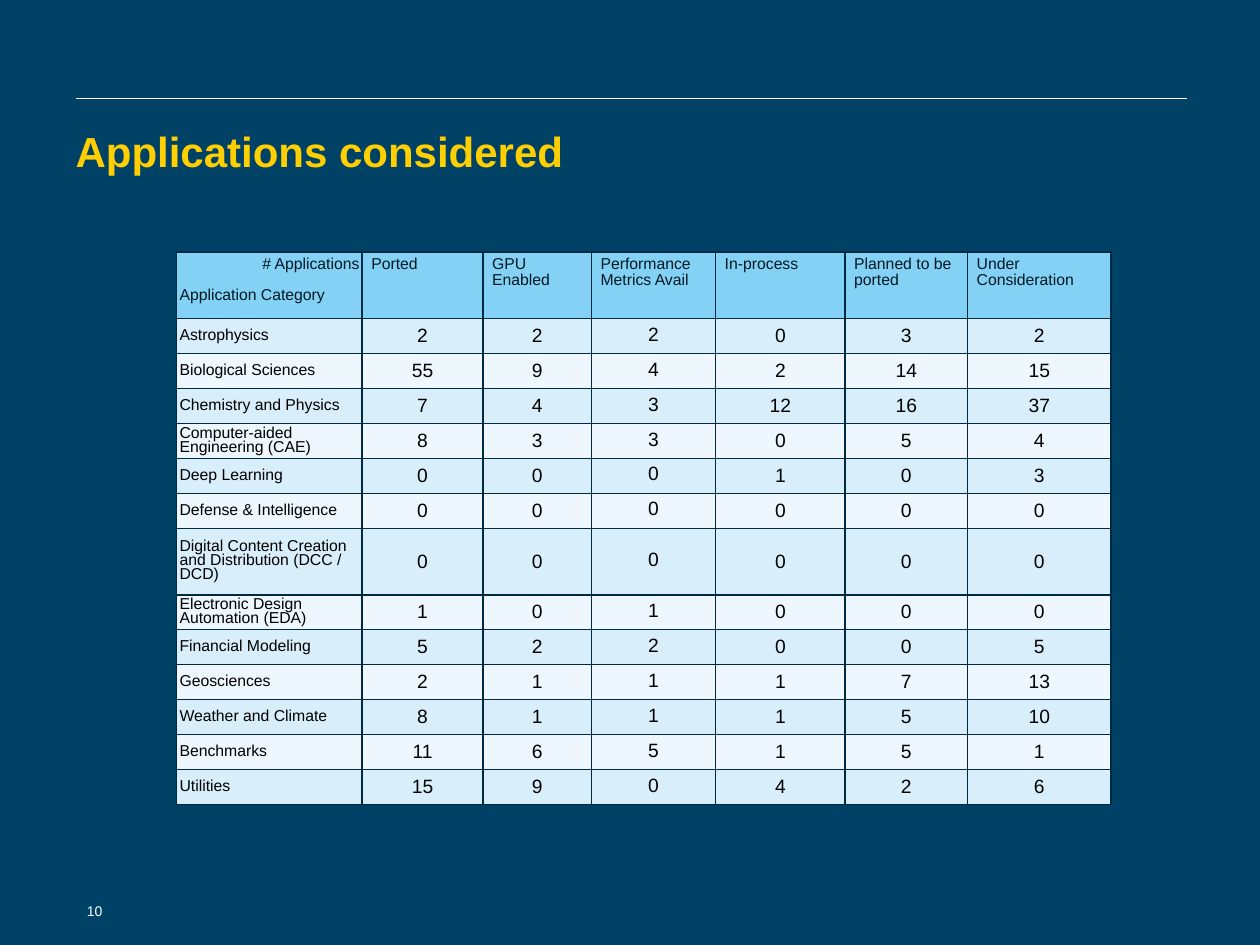
import dataclasses

import pptx
import pptx.dml.color
import pptx.enum.shapes
import pptx.enum.text
import pptx.oxml
import pptx.oxml.ns
import pptx.util

Pt = pptx.util.Pt
Align = pptx.enum.text.PP_ALIGN
Anchor = pptx.enum.text.MSO_ANCHOR


@dataclasses.dataclass(frozen=True)
class Theme:
    font: str = "Arial"
    background: str = "004266"
    rule: str = "FFFFFF"
    title: str = "FFCF01"
    page: str = "FFFFFF"
    border: str = "002944"
    header_fill: str = "83D1F5"
    band_fills: tuple = ("D9EEFB", "EDF7FD")
    header_text: str = "031923"
    body_text: str = "000000"
    title_size: float = 24
    count_size: float = 11
    label_size: float = 9
    page_size: float = 8


THEME = Theme()

COLUMN_WIDTHS = [106, 69, 62, 71, 74, 70, 82]
ROW_HEIGHT, TALL_ROW_HEIGHT = 20, 38
METRICS_COLUMN = 3
CORNER = "# Applications\nApplication Category"
HEADINGS = [
    CORNER, "Ported", "GPU Enabled", "Performance Metrics Avail",
    "In-process", "Planned to be ported", "Under Consideration",
]
LONG_CATEGORY = "Digital Content Creation and Distribution (DCC / DCD)"
APPLICATIONS = [
    ("Astrophysics", 2, 2, 2, 0, 3, 2),
    ("Biological Sciences", 55, 9, 4, 2, 14, 15),
    ("Chemistry and Physics", 7, 4, 3, 12, 16, 37),
    ("Computer-aided Engineering (CAE)", 8, 3, 3, 0, 5, 4),
    ("Deep Learning", 0, 0, 0, 1, 0, 3),
    ("Defense & Intelligence", 0, 0, 0, 0, 0, 0),
    (LONG_CATEGORY, 0, 0, 0, 0, 0, 0),
    ("Electronic Design Automation (EDA)", 1, 0, 1, 0, 0, 0),
    ("Financial Modeling", 5, 2, 2, 0, 0, 5),
    ("Geosciences", 2, 1, 1, 1, 7, 13),
    ("Weather and Climate", 8, 1, 1, 1, 5, 10),
    ("Benchmarks", 11, 6, 5, 1, 5, 1),
    ("Utilities", 15, 9, 0, 4, 2, 6),
]


def rgb(color):
    return pptx.dml.color.RGBColor.from_string(color)


def style_paragraph(paragraph, size, color, bold=False, align=Align.LEFT, spacing=None):
    paragraph.alignment = align
    paragraph.line_spacing = spacing
    for run in paragraph.runs:
        run.font.name = THEME.font
        run.font.size = Pt(size)
        run.font.bold = bold
        run.font.color.rgb = rgb(color)


def add_text(slide, box, text, size, color, bold=False, insets=(0, 0)):
    frame = slide.shapes.add_textbox(*map(Pt, box)).text_frame
    frame.word_wrap = True
    frame.margin_left = frame.margin_right = Pt(insets[0])
    frame.margin_top = frame.margin_bottom = Pt(insets[1])
    frame.text = text
    style_paragraph(frame.paragraphs[0], size, color, bold)


def add_rule(slide, box):
    left, top, width, height = box
    rule = slide.shapes.add_connector(
        pptx.enum.shapes.MSO_CONNECTOR.STRAIGHT,
        Pt(left), Pt(top), Pt(left + width), Pt(top + height),
    )
    rule.line.color.rgb = rgb(THEME.rule)
    rule.line.width = Pt(0.75)
    rule._element.spPr.append(pptx.oxml.parse_xml(
        f'<a:effectLst {pptx.oxml.ns.nsdecls("a")}/>'))


def add_title(slide, box):
    add_text(slide, box, "Applications considered", THEME.title_size, THEME.title, bold=True)


def add_page_number(slide, box):
    add_text(slide, box, "10", THEME.page_size, THEME.page, insets=(7.2, 3.6))


def frame_cell(cell, text, fill, insets, anchor):
    properties = cell._tc.get_or_add_tcPr()
    for side in ("lnL", "lnR", "lnT", "lnB"):
        properties.append(pptx.oxml.parse_xml(
            f'<a:{side} {pptx.oxml.ns.nsdecls("a")} w="{Pt(1)}"><a:solidFill>'
            f'<a:srgbClr val="{THEME.border}"/></a:solidFill></a:{side}>'))
    cell.fill.solid()
    cell.fill.fore_color.rgb = rgb(fill)
    cell.margin_left = cell.margin_right = Pt(insets[0])
    cell.margin_top = cell.margin_bottom = Pt(insets[1])
    cell.vertical_anchor = anchor
    cell.text_frame.text = text


def fill_heading(cell, heading):
    corner = heading == CORNER
    frame_cell(cell, heading, THEME.header_fill, (1.6 if corner else 5.2, 2.6), Anchor.TOP)
    for paragraph in cell.text_frame.paragraphs:
        style_paragraph(paragraph, THEME.label_size, THEME.header_text, spacing=0.9)
    if corner:
        applications, category = cell.text_frame.paragraphs
        applications.alignment = Align.RIGHT
        category.space_before = Pt(9)


def fill_entry(cell, column, value, fill):
    tight = column in (0, METRICS_COLUMN)
    frame_cell(cell, str(value), fill, (1.6, 0.8) if tight else (0, 0), Anchor.MIDDLE)
    style_paragraph(
        cell.text_frame.paragraphs[0],
        THEME.count_size if column else THEME.label_size,
        THEME.body_text,
        align=Align.CENTER if column else Align.LEFT,
        spacing=0.8 if tight else None,
    )


def add_applications_table(slide, box):
    table = slide.shapes.add_table(
        len(APPLICATIONS) + 1, len(HEADINGS), *map(Pt, box)).table
    table.first_row = table.horz_banding = False
    for column, width in zip(table.columns, COLUMN_WIDTHS):
        column.width = Pt(width)
    table.rows[0].height = Pt(TALL_ROW_HEIGHT)
    for column, heading in enumerate(HEADINGS):
        fill_heading(table.cell(0, column), heading)
    for index, entries in enumerate(APPLICATIONS):
        tall = entries[0] == LONG_CATEGORY
        table.rows[index + 1].height = Pt(TALL_ROW_HEIGHT if tall else ROW_HEIGHT)
        for column, value in enumerate(entries):
            fill_entry(table.cell(index + 1, column), column, value,
                       THEME.band_fills[index % 2])


def main():
    presentation = pptx.Presentation()
    presentation.slide_width, presentation.slide_height = Pt(720), Pt(540)
    slide = presentation.slides.add_slide(presentation.slide_layouts[6])
    slide.background.fill.solid()
    slide.background.fill.fore_color.rgb = rgb(THEME.background)
    add_rule(slide, (43.2, 56.2, 635, 0))
    add_page_number(slide, (42.5, 512, 168, 17))
    add_title(slide, (43.2, 71.5, 633.6, 56))
    add_applications_table(slide, (101, 144, 534, 316))
    presentation.save("out.pptx")


if __name__ == "__main__":
    main()
